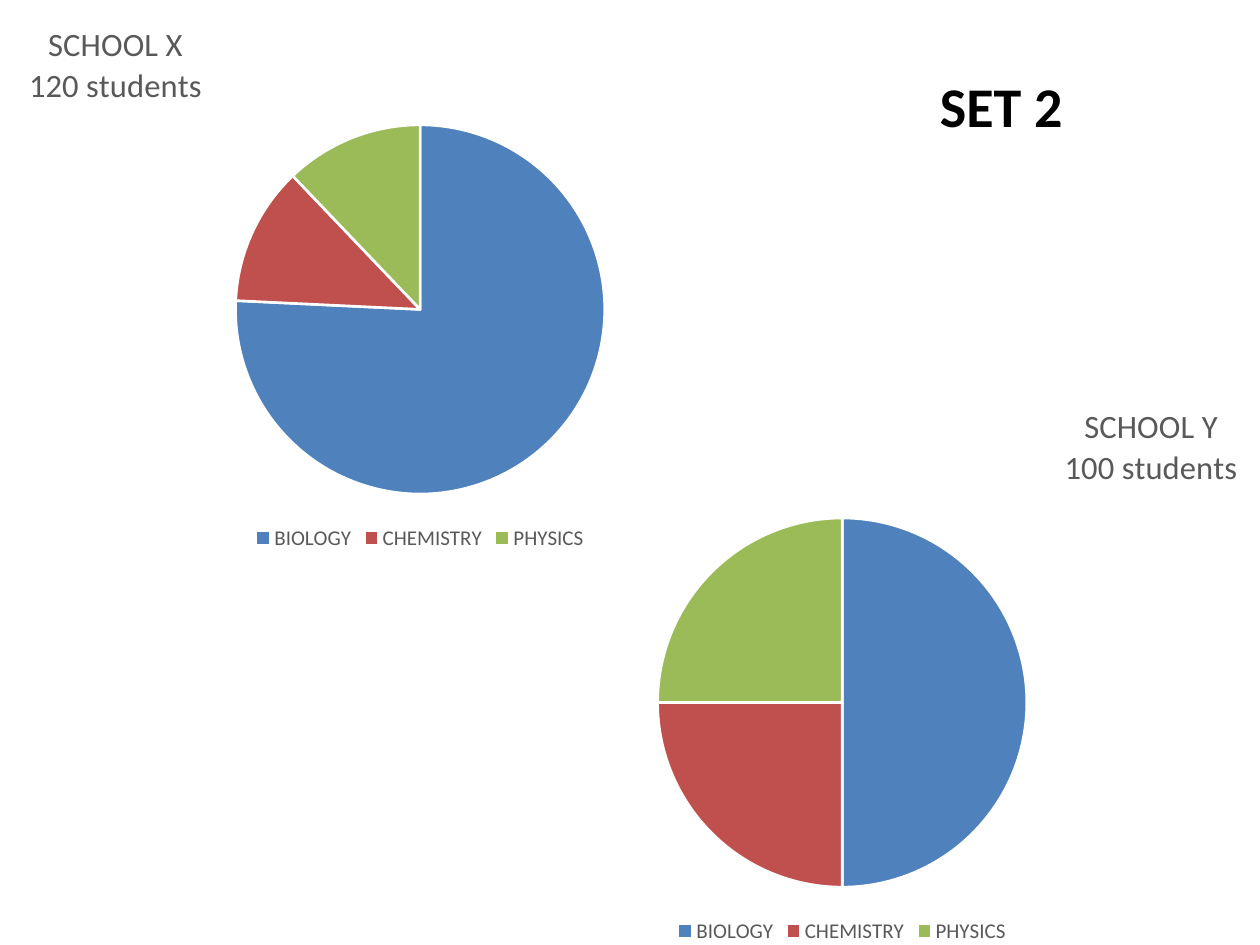
import pptx
import pptx.util
import pptx.chart.data
import pptx.dml.color
import pptx.enum.chart
import pptx.enum.text
import pptx.oxml

Inches, Pt = pptx.util.Inches, pptx.util.Pt
Rgb = pptx.dml.color.RGBColor

BLUE = Rgb(0x4F, 0x81, 0xBD)
RED = Rgb(0xC0, 0x50, 0x4D)
GREEN = Rgb(0x9B, 0xBB, 0x59)
GREY = Rgb(0x59, 0x59, 0x59)
BLACK = Rgb(0, 0, 0)
WHITE = Rgb(255, 255, 255)
FONT = "Calibri"

TITLE = "SET 2"
TOPICS = [("BIOLOGY", BLUE), ("CHEMISTRY", RED), ("PHYSICS", GREEN)]
SCHOOLS = [
    {"lines": ("SCHOOL X", "120 students"), "values": (75, 12, 12),
     "at": (0, -0.03), "head": (0.03, 0.04)},
    {"lines": ("SCHOOL Y", "100 students"), "values": (50, 25, 25),
     "at": (3.35, 3.09), "head": (0.76, 0.02)},
]
SIZE = (6.67, 4.44)
PIE = (0.28, 0.23, 0.44, 0.66)


def style(font, size, color, bold=False):
    font.name = FONT
    font.size = Pt(size)
    font.bold = bold
    font.color.rgb = color


def place(parent, spots, inner=False):
    for old in parent.findall(pptx.oxml.ns.qn("c:layout")):
        parent.remove(old)
    rows = '<c:layoutTarget val="inner"/>' if inner else ""
    rows += "".join(f'<c:{key}Mode val="edge"/>' for key in "xy")
    rows += "".join(f'<c:{key} val="{val}"/>' for key, val in zip("xywh", spots))
    node = pptx.oxml.parse_xml(
        f'<c:layout {pptx.oxml.ns.nsdecls("c")}>'
        f"<c:manualLayout>{rows}</c:manualLayout></c:layout>")
    parent.insert(0 if inner else 1, node)


def add_pie(slide, school):
    data = pptx.chart.data.CategoryChartData()
    data.categories = [name for name, _ in TOPICS]
    data.add_series("Series 1", school["values"])
    box = [Inches(n) for n in school["at"] + SIZE]
    chart = slide.shapes.add_chart(
        pptx.enum.chart.XL_CHART_TYPE.PIE, *box, data).chart
    style(chart.font, 10, BLACK)

    chart.has_title = True
    head = chart.chart_title
    head.include_in_layout = False
    frame = head.text_frame
    for i, line in enumerate(school["lines"]):
        para = frame.add_paragraph() if i else frame.paragraphs[0]
        run = para.add_run()
        run.text = line
        style(run.font, 18.6, GREY)
    place(head._element, school["head"])

    chart.has_legend = True
    chart.legend.position = pptx.enum.chart.XL_LEGEND_POSITION.BOTTOM
    chart.legend.include_in_layout = False
    style(chart.legend.font, 12, GREY)

    plot = chart.plots[0]
    plot.vary_by_categories = True
    for i, (_, color) in enumerate(TOPICS):
        part = plot.series[0].points[i].format
        part.fill.solid()
        part.fill.fore_color.rgb = color
        part.line.color.rgb = WHITE
        part.line.width = Pt(1.5)
    place(chart._chartSpace.chart.plotArea, PIE, inner=True)


def add_title(slide):
    title = slide.shapes.title
    title.left, title.top = Inches(7.36), Inches(0.52)
    title.width, title.height = Inches(1.26), Inches(0.64)
    frame = title.text_frame
    frame.word_wrap = False
    frame.auto_size = pptx.enum.text.MSO_AUTO_SIZE.SHAPE_TO_FIT_TEXT
    frame.vertical_anchor = pptx.enum.text.MSO_ANCHOR.TOP
    para = frame.paragraphs[0]
    para.alignment = pptx.enum.text.PP_ALIGN.LEFT
    run = para.add_run()
    run.text = TITLE
    style(run.font, 32, BLACK, True)


def main():
    deck = pptx.Presentation()
    deck.slide_width, deck.slide_height = Inches(10), Inches(7.5)
    slide = deck.slides.add_slide(deck.slide_layouts[5])
    for school in SCHOOLS:
        add_pie(slide, school)
    add_title(slide)
    deck.save("out.pptx")


if __name__ == "__main__":
    main()
